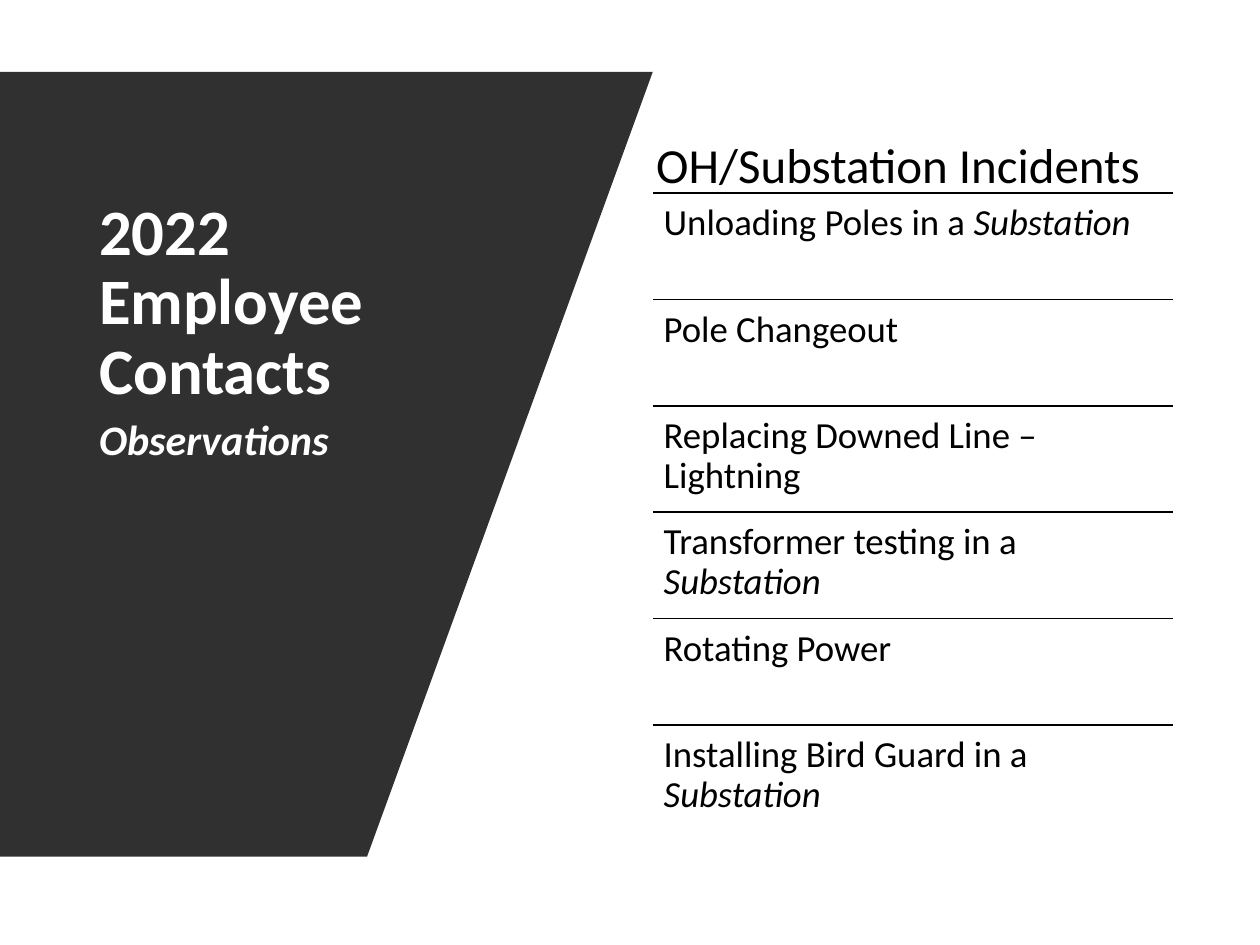
from lxml.etree import SubElement
from pptx import Presentation
from pptx.dml.color import RGBColor as Rgb
from pptx.enum.shapes import MSO_CONNECTOR as Connector
from pptx.oxml.ns import qn
from pptx.util import Cm, Pt

COLORS = {"panel": "303030", "light": "FFFFFF", "ink": "000000"}
FONT = "Calibri"
LIST_LEFT, LIST_TOP, LIST_WIDTH, LIST_HEIGHT = 13.16, 3.89, 10.49, 12.87
INCIDENTS = [
    ("Unloading Poles in a ", "Substation"),
    ("Pole Changeout", ""),
    ("Replacing Downed Line – Lightning", ""),
    ("Transformer testing in a ", "Substation"),
    ("Rotating Power", ""),
    ("Installing Bird Guard in a ", "Substation"),
]


def add_panel(page, points):
    """Draw the dark panel through points given in centimetres."""
    corners = [(Cm(x), Cm(y)) for x, y in points]
    builder = page.shapes.build_freeform(*corners[0])
    builder.add_line_segments(corners[1:], close=True)
    panel = builder.convert_to_shape()
    panel.shadow.inherit = False
    panel.fill.solid()
    panel.fill.fore_color.rgb = Rgb.from_string(COLORS["panel"])
    panel.line.fill.background()


def add_text(page, frame, paragraphs, color, space, inset=None):
    """Add a text box whose paragraphs are lists of (text, format) spans."""
    box = page.shapes.add_textbox(*map(Cm, frame))
    text = box.text_frame
    text.word_wrap = True
    if inset is not None:
        for side in ("left", "top", "right", "bottom"):
            setattr(text, f"margin_{side}", Cm(inset))
    for index, spans in enumerate(paragraphs):
        para = text.paragraphs[0] if index == 0 else text.add_paragraph()
        para.line_spacing = 0.9
        para.space_after = Pt(space)
        for words, formats in spans:
            span = para.add_run()
            span.text = words
            span.font.color.rgb = Rgb.from_string(COLORS[color])
            for name, value in {"name": FONT, **formats}.items():
                setattr(span.font, name, value)
    return box


def add_rule(page, top):
    """Draw a thin horizontal rule across the incident list."""
    right = LIST_LEFT + LIST_WIDTH
    rule = page.shapes.add_connector(
        Connector.STRAIGHT, Cm(LIST_LEFT), Cm(top), Cm(right), Cm(top))
    rule.line.color.rgb = Rgb.from_string(COLORS["ink"])
    rule.line.width = Pt(1)
    SubElement(rule.element.spPr, qn("a:effectLst"))


def add_incidents(page):
    """Stack the incidents at equal steps, each below its rule."""
    step = LIST_HEIGHT / len(INCIDENTS)
    for index, (plain, slanted) in enumerate(INCIDENTS):
        top = LIST_TOP + index * step
        spans = [(plain, {"size": Pt(21)})]
        if slanted:
            spans.append((slanted, {"size": Pt(21), "italic": True}))
        add_rule(page, top)
        add_text(page, (LIST_LEFT, top, LIST_WIDTH, step), [spans],
                 "ink", 7.35, inset=0.22)


def add_heading(page):
    """Add the indented heading above the incident list."""
    heading = [("OH/Substation Incidents", {"size": Pt(28)})]
    box = add_text(page, (9.96, 2.72, 15.09, 1.35), [heading], "ink", 6)
    para = box.text_frame.paragraphs[0]
    para.level = 1
    properties = para._p.get_or_add_pPr()
    for name, value in {"marL": Cm(3.02), "indent": 0}.items():
        properties.set(name, str(int(value)))


def main():
    """Build the slide and save the deck."""
    deck = Presentation()
    deck.slide_width, deck.slide_height = Cm(25.4), Cm(19.05)
    page = deck.slides.add_slide(deck.slide_layouts[6])
    add_panel(page, [(0, 1.45), (13.16, 1.45), (7.4, 17.27), (0, 17.27)])
    title = [("2022 Employee Contacts", {"size": Pt(37), "bold": True})]
    subtitle = [("Observations", {"size": Pt(24), "bold": True, "italic": True})]
    add_text(page, (1.75, 3.89, 6.91, 8.23), [title, subtitle], "light", 6)
    add_incidents(page)
    add_heading(page)
    deck.save("out.pptx")


if __name__ == "__main__":
    main()
